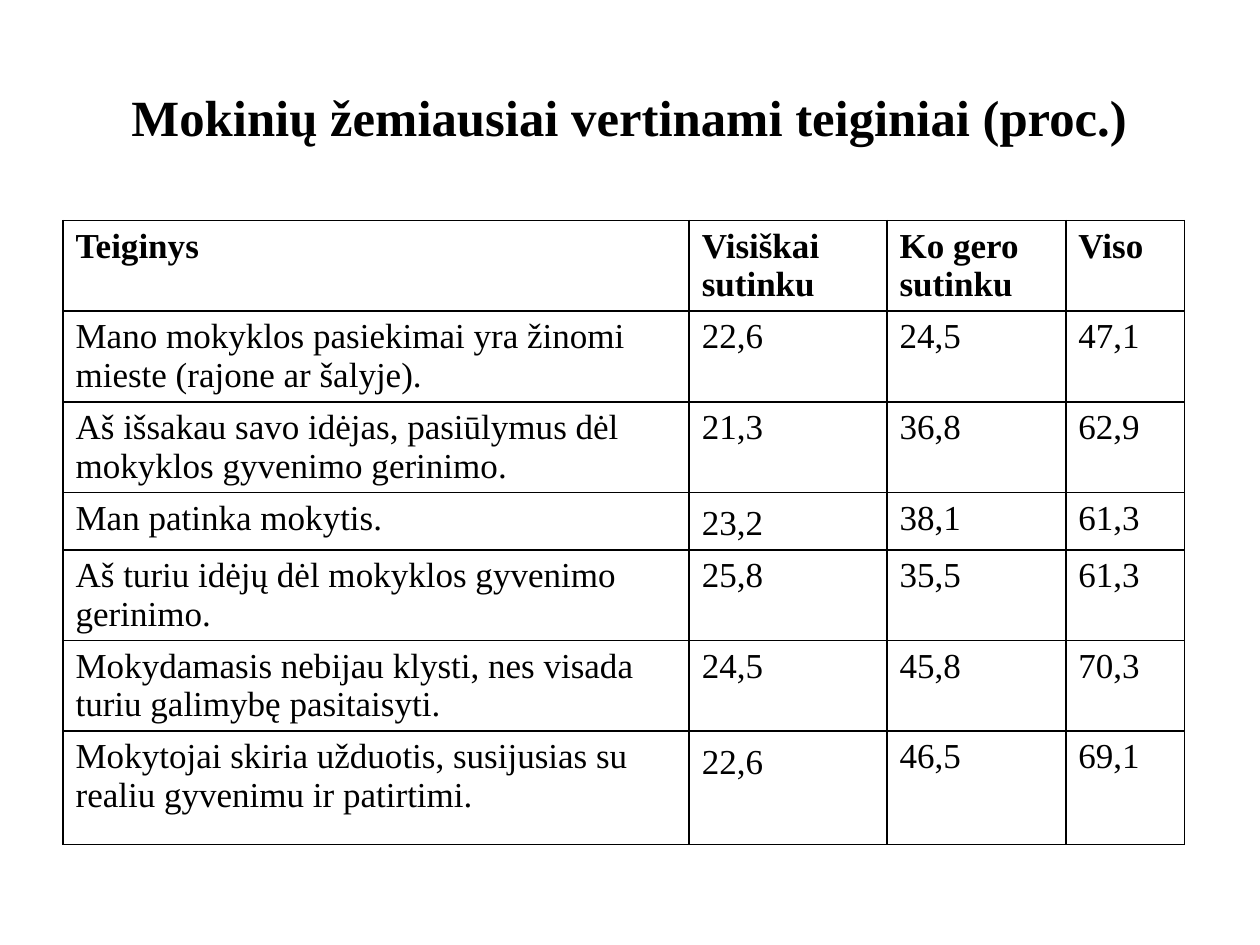
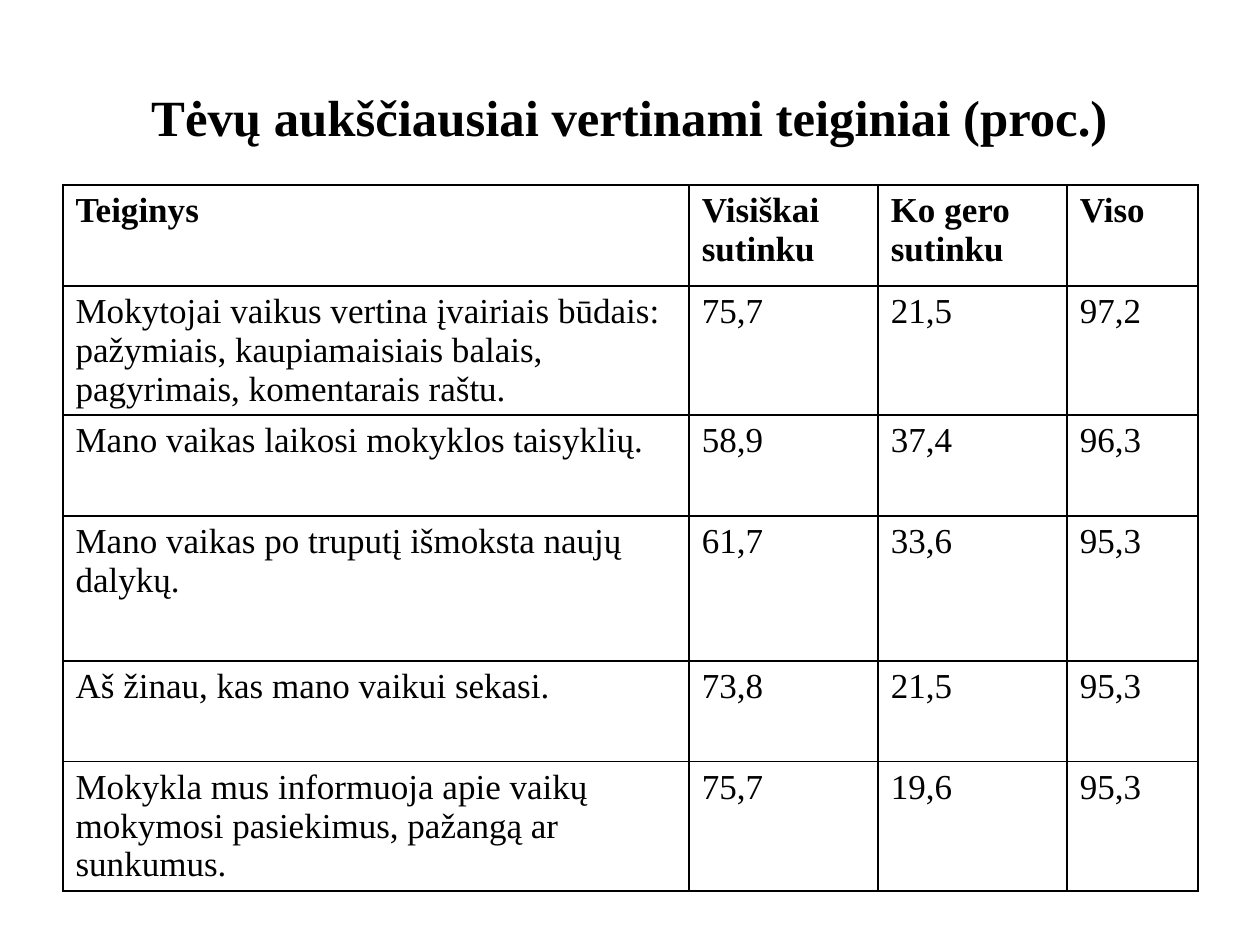
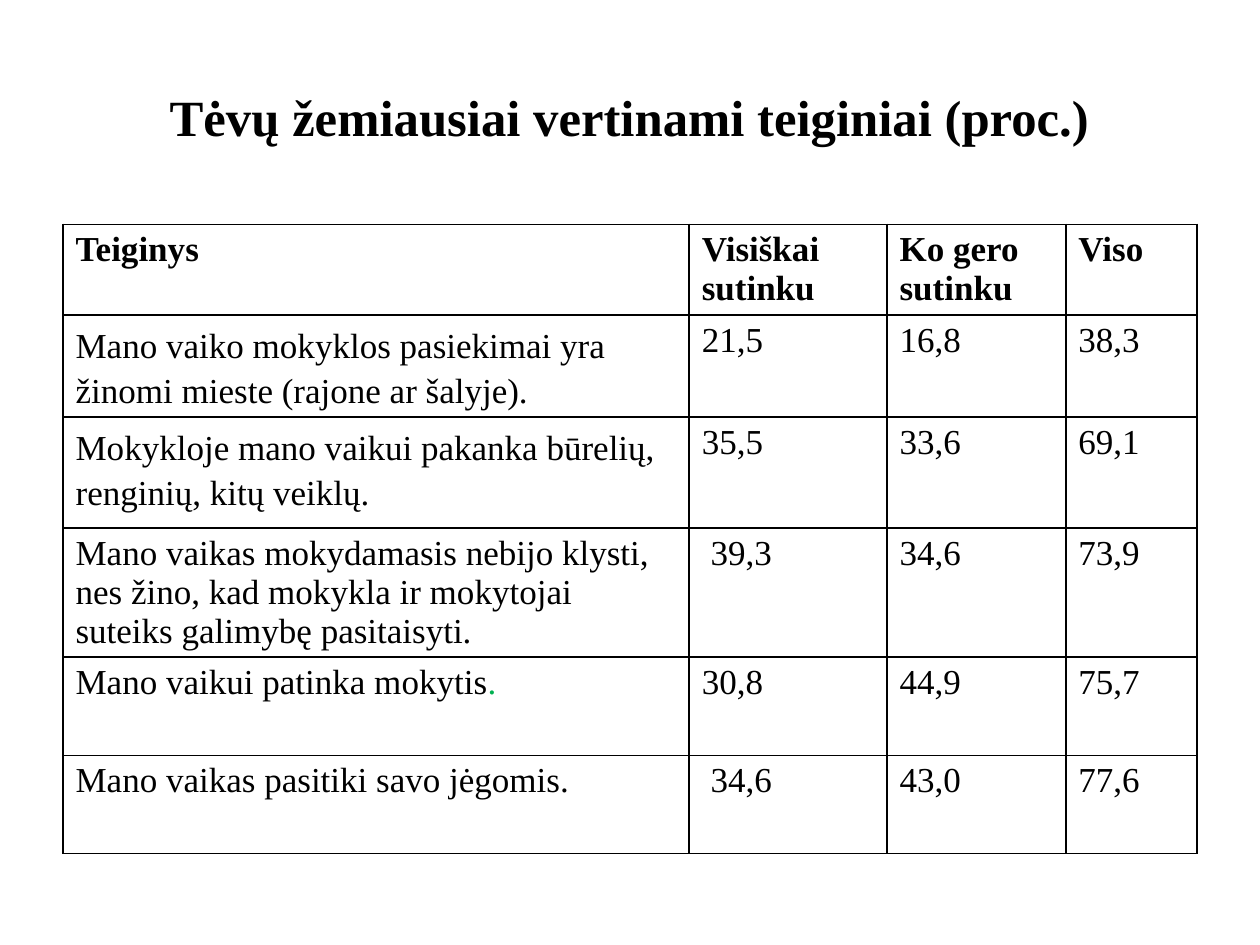
from lxml import etree
from pptx import Presentation
from pptx.dml.color import RGBColor
from pptx.enum import text
from pptx.oxml.ns import qn
from pptx.util import Inches, Pt

FONT = "Times New Roman"
BLACK, WHITE, GREEN = "000000", "FFFFFF", "00B050"
TITLE_SIZE, CELL_SIZE, BORDER_WIDTH = 29, 20, 1
LOOSE_SPACING = 1.15
LEFT = 0.5
TITLE_BOX = (LEFT, 0.3, 9, 1.25)
HEADER = ("Teiginys", "Visiškai sutinku", "Ko gero sutinku", "Viso")

# "loose" lists the (row, column) cells with wider line spacing;
# "green_end" lists the cells whose last character is green.
SLIDES = [
    {
        "title": "Mokinių žemiausiai vertinami teiginiai (proc.)",
        "top": 1.75,
        "columns": (4.97, 1.57, 1.42, 0.94),
        "heights": (0.72, 0.72, 0.72, 0.45, 0.72, 0.72, 0.9),
        "loose": [(3, 1), (6, 1)],
        "rows": [
            ("Mano mokyklos pasiekimai yra žinomi mieste (rajone ar šalyje).", "22,6", "24,5", "47,1"),
            ("Aš išsakau savo idėjas, pasiūlymus dėl mokyklos gyvenimo gerinimo.", "21,3", "36,8", "62,9"),
            ("Man patinka mokytis.", "23,2", "38,1", "61,3"),
            ("Aš turiu idėjų dėl mokyklos gyvenimo gerinimo.", "25,8", "35,5", "61,3"),
            ("Mokydamasis nebijau klysti, nes visada turiu galimybę pasitaisyti.", "24,5", "45,8", "70,3"),
            ("Mokytojai skiria užduotis, susijusias su realiu gyvenimu ir patirtimi.", "22,6", "46,5", "69,1"),
        ],
    },
    {
        "title": "Tėvų aukščiausiai vertinami teiginiai (proc.)",
        "top": 1.47,
        "columns": (4.97, 1.5, 1.5, 1.04),
        "heights": (0.8, 1.02, 0.8, 1.15, 0.8, 1.02),
        "rows": [
            ("Mokytojai vaikus vertina įvairiais būdais: pažymiais, kaupiamaisiais balais, "
             "pagyrimais, komentarais raštu.", "75,7", "21,5", "97,2"),
            ("Mano vaikas laikosi mokyklos taisyklių.", "58,9", "37,4", "96,3"),
            ("Mano vaikas po truputį išmoksta naujų dalykų.", "61,7", "33,6", "95,3"),
            ("Aš žinau, kas mano vaikui sekasi.", "73,8", "21,5", "95,3"),
            ("Mokykla mus informuoja apie vaikų mokymosi pasiekimus, pažangą ar sunkumus.",
             "75,7", "19,6", "95,3"),
        ],
    },
    {
        "title": "Tėvų žemiausiai vertinami teiginiai (proc.)",
        "top": 1.78,
        "columns": (4.97, 1.57, 1.42, 1.04),
        "heights": (0.72, 0.81, 0.88, 1.02, 0.78, 0.78),
        "loose": [(1, 0), (2, 0)],
        "green_end": [(4, 0)],
        "rows": [
            ("Mano vaiko mokyklos pasiekimai yra žinomi mieste (rajone ar šalyje).", "21,5", "16,8", "38,3"),
            ("Mokykloje mano vaikui pakanka būrelių, renginių, kitų veiklų.", "35,5", "33,6", "69,1"),
            ("Mano vaikas mokydamasis nebijo klysti, nes žino, kad mokykla ir mokytojai "
             "suteiks galimybę pasitaisyti.", " 39,3", "34,6", "73,9"),
            ("Mano vaikui patinka mokytis.", "30,8", "44,9", "75,7"),
            ("Mano vaikas pasitiki savo jėgomis.", " 34,6", "43,0", "77,6"),
        ],
    },
]


def color(value):
    return RGBColor.from_string(value)


def format_run(run, size, bold, fill=BLACK):
    run.font.name = FONT
    run.font.size = Pt(size)
    run.font.bold = bold
    run.font.color.rgb = color(fill)


def add_borders(cell):
    properties = cell._tc.get_or_add_tcPr()
    for side in ("lnL", "lnR", "lnT", "lnB"):
        line = etree.SubElement(properties, qn(f"a:{side}"), w=str(Pt(BORDER_WIDTH)))
        fill = etree.SubElement(line, qn("a:solidFill"))
        etree.SubElement(fill, qn("a:srgbClr"), val=BLACK)


def fill_cell(cell, content, bold, loose, green_end):
    add_borders(cell)
    cell.fill.background()
    paragraph = cell.text_frame.paragraphs[0]
    paragraph.text = content[:-1] if green_end else content
    format_run(paragraph.runs[0], CELL_SIZE, bold)
    if green_end:
        ending = paragraph.add_run()
        ending.text = content[-1]
        format_run(ending, CELL_SIZE, bold, GREEN)
    if loose:
        paragraph.line_spacing = LOOSE_SPACING


def add_title(slide, title):
    shape = slide.shapes.title
    shape.left, shape.top, shape.width, shape.height = map(Inches, TITLE_BOX)
    frame = shape.text_frame
    frame.text = title
    frame.vertical_anchor = text.MSO_ANCHOR.MIDDLE
    paragraph = frame.paragraphs[0]
    paragraph.alignment = text.PP_ALIGN.CENTER
    format_run(paragraph.runs[0], TITLE_SIZE, True)


def add_statement_table(slide, data):
    rows = [HEADER, *data["rows"]]
    columns, heights = data["columns"], data["heights"]
    table = slide.shapes.add_table(
        len(rows), len(columns), Inches(LEFT), Inches(data["top"]),
        Inches(sum(columns)), Inches(sum(heights))).table
    table.first_row = table.horz_banding = False
    for column, width in zip(table.columns, columns):
        column.width = Inches(width)
    for row, height in zip(table.rows, heights):
        row.height = Inches(height)
    for row_index, row in enumerate(rows):
        for column_index, content in enumerate(row):
            place = (row_index, column_index)
            fill_cell(table.cell(*place), content, row_index == 0,
                      place in data.get("loose", []), place in data.get("green_end", []))


def main():
    presentation = Presentation()
    presentation.slide_width, presentation.slide_height = Inches(10), Inches(7.5)
    background = presentation.slide_master.background.fill
    background.solid()
    background.fore_color.rgb = color(WHITE)
    title_only = presentation.slide_layouts.get_by_name("Title Only")
    for data in SLIDES:
        slide = presentation.slides.add_slide(title_only)
        add_title(slide, data["title"])
        add_statement_table(slide, data)
    presentation.save("out.pptx")


if __name__ == "__main__":
    main()
